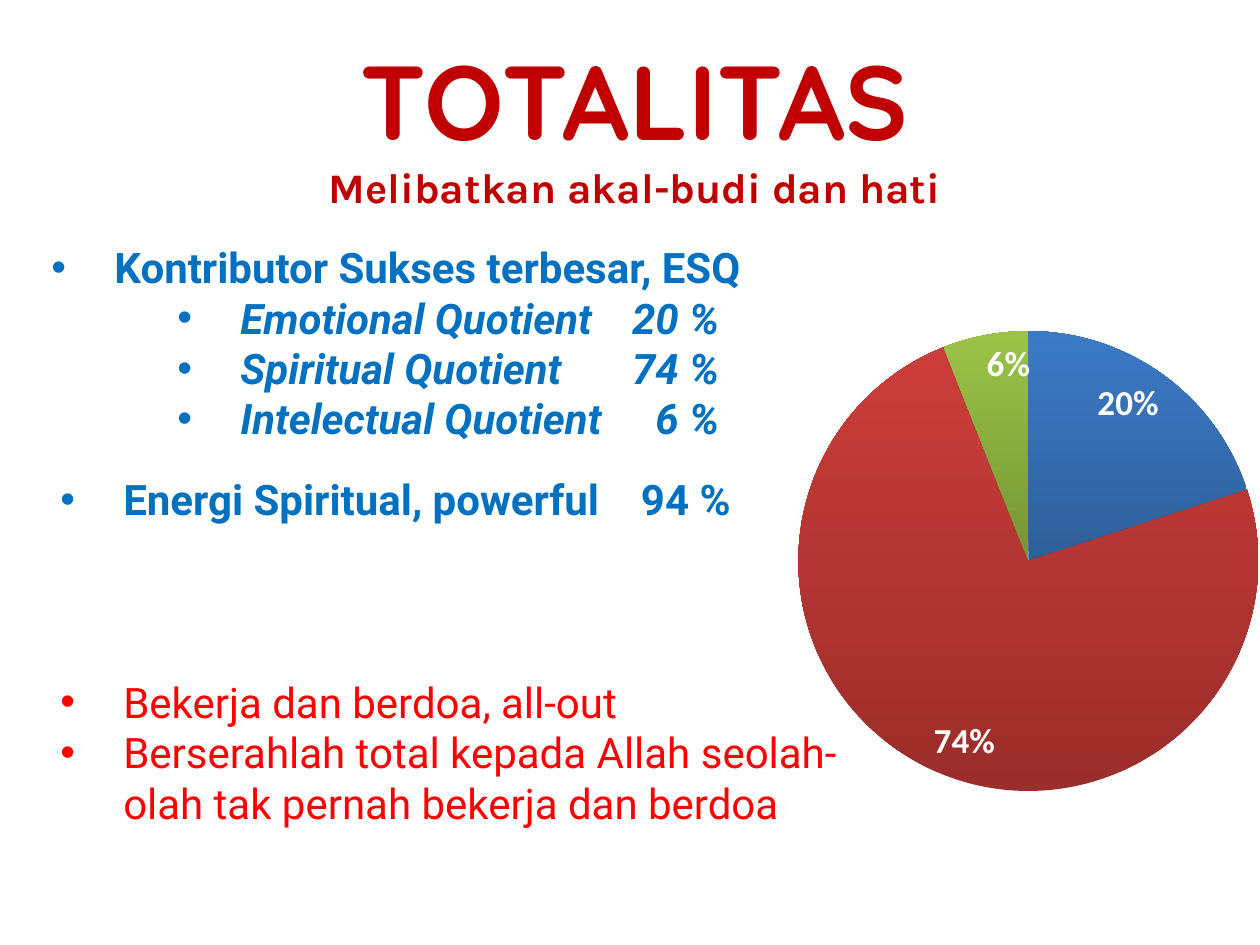
from lxml import etree
from pptx import Presentation
from pptx.chart.data import CategoryChartData as PieData
from pptx.dml.color import RGBColor as RGB
from pptx.enum.chart import XL_CHART_TYPE as Kind, XL_LABEL_POSITION as Spot
from pptx.enum.text import MSO_ANCHOR as Anchor, PP_ALIGN as Align
from pptx.oxml.ns import qn
from pptx.util import Inches, Pt

BLUE = RGB(0x00, 0x70, 0xC0)
RED = RGB(0xFF, 0x00, 0x00)
WINE = RGB(0xC0, 0x00, 0x00)
WHITE = RGB(0xFF, 0xFF, 0xFF)
BLACK = RGB(0x00, 0x00, 0x00)
SLICES = [
    (RGB(0x2E, 0x5F, 0x99), RGB(0x3C, 0x7A, 0xC7)),
    (RGB(0x9B, 0x2D, 0x2A), RGB(0xCB, 0x3D, 0x3A)),
    (RGB(0x76, 0x95, 0x35), RGB(0x9B, 0xC3, 0x48)),
]


def write(para, text, size=24, face="Roboto", color=BLUE, bold=True, italic=False):
    run = para.add_run()
    run.text = text
    font = run.font
    font.size, font.name = Pt(size), face
    font.bold, font.italic = bold, italic
    font.color.rgb = color


def bullet(para, left, tab=None):
    props = para._p.get_or_add_pPr()
    props.set("marL", str(Inches(left)))
    props.set("indent", str(Inches(-0.5)))
    etree.SubElement(props, qn("a:buFont"), typeface="Arial")
    etree.SubElement(props, qn("a:buChar"), char="•")
    if tab:
        tabs = etree.SubElement(props, qn("a:tabLst"))
        etree.SubElement(tabs, qn("a:tab"), pos=str(Inches(tab)), algn="r")


class Deck:
    def __init__(self, width, height):
        self.file = Presentation()
        self.file.slide_width = Inches(width)
        self.file.slide_height = Inches(height)
        self.slide = self.file.slides.add_slide(self.file.slide_layouts[5])

    def title(self, box, head, sub):
        shape = self.slide.shapes.title
        shape.left, shape.top, shape.width, shape.height = map(Inches, box)
        frame = shape.text_frame
        frame.word_wrap = True
        frame.vertical_anchor = Anchor.TOP
        first, second = frame.paragraphs[0], frame.add_paragraph()
        write(first, head, size=60, face="Quicksand", color=WINE)
        write(second, sub, face="Karla", color=WINE)
        for para in (first, second):
            para.alignment = Align.CENTER
            para.space_before = Pt(0)

    def points(self, box, items):
        frame = self.slide.shapes.add_textbox(*map(Inches, box)).text_frame
        frame.word_wrap = True
        for i, (text, left, tab, gap, style) in enumerate(items):
            para = frame.add_paragraph() if i else frame.paragraphs[0]
            para.space_before = Pt(gap)
            bullet(para, left, tab)
            write(para, text, **style)

    def pie(self, box, values, plot):
        data = PieData()
        data.categories = [str(i + 1) for i in range(len(values))]
        data.add_series("Series 1", values)
        chart = self.slide.shapes.add_chart(Kind.PIE, *map(Inches, box), data).chart
        chart.has_title = chart.has_legend = False
        chart.font.size, chart.font.name = Pt(18), "Calibri"
        chart.font.color.rgb = BLACK
        pie = chart.plots[0]
        pie.vary_by_categories = True
        for i, colors in enumerate(SLICES):
            fill = pie.series[0].points[i].format.fill
            fill.gradient()
            fill.gradient_angle = 90
            for stop, color in zip(fill.gradient_stops, colors):
                stop.color.rgb = color
        pie.has_data_labels = True
        labels = pie.data_labels
        labels.show_value, labels.show_percentage = False, True
        labels.number_format, labels.number_format_is_linked = "0%", False
        labels.position = Spot.INSIDE_END
        labels.font.size, labels.font.bold = Pt(20), True
        labels.font.color.rgb = WHITE
        self.place(chart, plot)

    def place(self, chart, plot):
        area = chart._chartSpace.find(".//" + qn("c:plotArea"))
        layout = area.find(qn("c:layout"))
        if layout is None:
            layout = etree.Element(qn("c:layout"))
            area.insert(0, layout)
        manual = etree.SubElement(layout, qn("c:manualLayout"))
        rules = [("layoutTarget", "inner"), ("xMode", "edge"), ("yMode", "edge")]
        for name, val in rules + list(zip("xywh", plot)):
            etree.SubElement(manual, qn("c:" + name), val=str(val))


def main():
    deck = Deck(10, 7.5)
    deck.title((1.09, 0.23, 7.89, 1.51), "TOTALITAS", "Melibatkan akal-budi dan hati")
    scores = [
        ("Emotional Quotient", 20),
        ("Spiritual Quotient", 74),
        ("Intelectual Quotient", 6),
    ]
    deck.points((0.31, 1.87, 9.22, 1.73), [
        ("Kontributor Sukses terbesar, ESQ", 0.5, None, 0, {}),
        *[(f"{name}\t{val} %", 1.5, 5.3, 0, {"italic": True}) for name, val in scores],
    ])
    plain = {"color": RED, "bold": False}
    deck.points((0.38, 3.71, 6.55, 2.61), [
        ("Energi Spiritual, powerful\t94 %", 0.5, 5.32, 0, {}),
        ("Bekerja dan berdoa, all-out", 0.5, None, 87, plain),
        ("Berserahlah total kepada Allah seolah-olah tak pernah bekerja dan berdoa",
         0.5, None, 0, plain),
    ])
    deck.pie((5.49, 2.11, 5.29, 4.3), [val for _, val in scores], (0.16, 0.12, 0.69, 0.85))
    deck.file.save("out.pptx")


if __name__ == "__main__":
    main()
